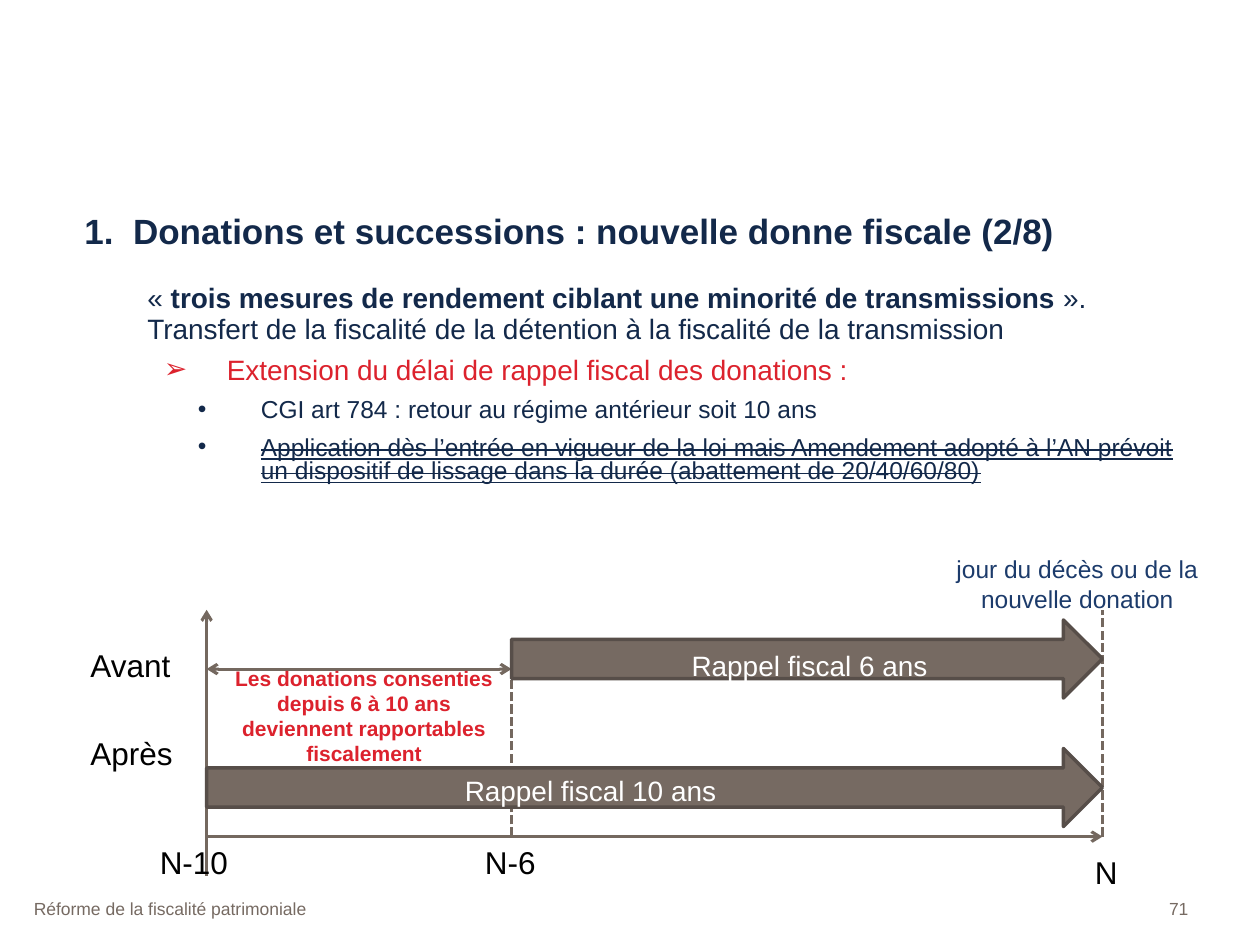
from typing import NamedTuple

import pptx
import pptx.dml.color
import pptx.enum.dml
import pptx.enum.shapes
import pptx.enum.text
import pptx.oxml
import pptx.oxml.ns
import pptx.util
from pptx.util import Inches

NAVY, BLUE, RED = "13294A", "1C3B6B", "DC222D"
TAUPE, LINE, OUTLINE = "766A62", "74685F", "574E49"
BLACK, WHITE = "000000", "FFFFFF"

LEFT = pptx.enum.text.PP_ALIGN.LEFT
CENTER = pptx.enum.text.PP_ALIGN.CENTER
RIGHT = pptx.enum.text.PP_ALIGN.RIGHT

# Horizontal positions of the dates and height of the time axis
N_10, N_6, N = 1.64, 4.06, 8.75
AXIS, CHART_TOP = 6.64, 4.84
ARROW_HEIGHT = 0.62


class Label(NamedTuple):
    text: str
    left: float
    top: float
    width: float
    height: float
    size: float
    color: str
    align: pptx.enum.text.PP_ALIGN = LEFT
    bold: bool = False
    wrap: bool = True


class Line(NamedTuple):
    start: tuple[float, float]
    end: tuple[float, float]
    dashed: bool = False
    head: bool = False
    tail: bool = False


class Run(NamedTuple):
    text: str
    bold: bool = False
    struck: bool = False


class Item(NamedTuple):
    runs: list[Run]
    level: int
    margin: float
    indent: float
    spacing: float
    size: float
    color: str
    bullet: str = ""


LINES = [
    Line((N_10, AXIS), (N, AXIS), tail=True),
    Line((N_6, AXIS), (N_6, 5.16), dashed=True),
    Line((N_10, 6.95), (N_10, CHART_TOP), tail=True),
    Line((N, AXIS), (N, CHART_TOP), dashed=True),
    Line((N_6, 5.31), (N_10, 5.31), head=True, tail=True),
]

# Start and top of each block arrow; both end at N
PERIODS = [(N_6, 4.92), (N_10, 5.94)]

LABELS = [
    Label("71", 8.91, 7.08, 0.62, 0.42, 10, TAUPE, RIGHT),
    Label("Réforme de la fiscalité patrimoniale", 0.17, 7.08, 8.48, 0.42, 10, TAUPE),
    Label("N", 8.59, 6.72, 0.55, 0.4, 18, BLACK),
    Label("N-6", 3.75, AXIS, 0.7, 0.4, 18, BLACK),
    Label("N-10", 1.17, AXIS, 0.94, 0.4, 18, BLACK),
    Label("Les donations consenties depuis 6 à 10 ans deviennent rapportables fiscalement",
          1.72, 5.23, 2.34, 0.91, 12, RED, CENTER, bold=True),
    Label("jour du décès ou de la nouvelle donation", 7.34, 4.35, 2.42, 0.57, 14, BLUE, CENTER),
    Label("Avant", 0.62, 5.08, 0.94, 0.4, 18, BLACK),
    Label("Après", 0.62, 5.78, 0.86, 0.4, 18, BLACK, wrap=False),
    Label("Rappel fiscal 6 ans", 5.39, 5.1, 3.12, 0.37, 16, WHITE),
    Label("Rappel fiscal 10 ans", 3.59, 6.09, 2.22, 0.37, 16, WHITE),
]

ITEMS = [
    Item([Run("«\u00a0"),
          Run("trois mesures de rendement ciblant une minorité de transmissions", bold=True),
          Run("\u00a0». Transfert de la fiscalité de la détention à la fiscalité de la transmission")],
         0, 0.5, 0, 0.9, 16, NAVY),
    Item([Run("Extension du délai de rappel fiscal des donations :")],
         1, 1.13, -0.5, 0.8, 16, RED, "➢"),
    Item([Run("CGI art 784 : retour au régime antérieur soit 10 ans")],
         2, 1.4, -0.5, 0.8, 14, NAVY, "•"),
    Item([Run("Application dès l’entrée en vigueur de la loi mais Amendement adopté à l’AN "
              "prévoit un dispositif de lissage dans la durée (abattement de 20/40/60/80)",
              struck=True)],
         2, 1.4, -0.5, 0.8, 14, NAVY, "•"),
]


def rgb(color: str) -> pptx.dml.color.RGBColor:
    return pptx.dml.color.RGBColor.from_string(color)


def add_element(parent, tag: str, **attributes: str) -> None:
    element = pptx.oxml.ns.qn(tag)
    child = parent.makeelement(element, attributes)
    parent.append(child)


def format_font(font, size: float, color: str, bold: bool = False) -> None:
    values = {"name": "Arial", "size": pptx.util.Pt(size), "bold": bold}
    for name, value in values.items():
        setattr(font, name, value)
    font.color.rgb = rgb(color)


def place(shape, left: float, top: float, width: float, height: float) -> None:
    values = {"left": left, "top": top, "width": width, "height": height}
    for name, value in values.items():
        setattr(shape, name, Inches(value))
    frame = shape.text_frame
    frame.vertical_anchor = pptx.enum.text.MSO_ANCHOR.TOP
    frame.auto_size = pptx.enum.text.MSO_AUTO_SIZE.NONE


def fill_title(title) -> None:
    place(title, 0.57, 1.61, 8.96, 0.47)
    paragraph = title.text_frame.paragraphs[0]
    paragraph.alignment = LEFT
    run = paragraph.add_run()
    run.text = "1.  Donations et successions : nouvelle donne fiscale (2/8)"
    format_font(run.font, 20, NAVY, bold=True)


def fill_body(body, items: list[Item]) -> None:
    place(body, 0.57, 2.21, 8.96, 4.49)
    frame = body.text_frame
    for index, item in enumerate(items):
        paragraph = frame.add_paragraph() if index else frame.paragraphs[0]
        properties = paragraph._p.get_or_add_pPr()
        properties.set("marL", str(Inches(item.margin)))
        properties.set("indent", str(Inches(item.indent)))
        if item.bullet:
            add_element(properties, "a:buChar", char=item.bullet)
        else:
            add_element(properties, "a:buNone")
        paragraph.level = item.level
        paragraph.line_spacing = item.spacing
        paragraph.space_before = pptx.util.Pt(8 if index else 0)
        for part in item.runs:
            run = paragraph.add_run()
            run.text = part.text
            format_font(run.font, item.size, item.color, part.bold)
            if part.struck:
                run.font.underline = True
                run._r.get_or_add_rPr().set("strike", "sngStrike")


def draw_line(slide, line: Line) -> None:
    points = [Inches(value) for value in (*line.start, *line.end)]
    connector = slide.shapes.add_connector(pptx.enum.shapes.MSO_CONNECTOR.STRAIGHT, *points)
    connector.line.color.rgb = rgb(LINE)
    connector.line.width = pptx.util.Pt(1.75)
    if line.dashed:
        connector.line.dash_style = pptx.enum.dml.MSO_LINE.SQUARE_DOT
    outline = connector.line._get_or_add_ln()
    for shown, tag in ((line.head, "a:headEnd"), (line.tail, "a:tailEnd")):
        if shown:
            add_element(outline, tag, type="arrow")
    add_element(connector._element.spPr, "a:effectLst")


def draw_period(slide, start: float, top: float) -> None:
    arrow = slide.shapes.add_shape(
        pptx.enum.shapes.MSO_SHAPE.RIGHT_ARROW,
        Inches(start), Inches(top), Inches(N - start), Inches(ARROW_HEIGHT))
    arrow.shadow.inherit = False
    arrow.fill.solid()
    arrow.fill.fore_color.rgb = rgb(TAUPE)
    arrow.line.color.rgb = rgb(OUTLINE)
    arrow.line.width = pptx.util.Pt(2)


def draw_label(slide, label: Label) -> None:
    bounds = (label.left, label.top, label.width, label.height)
    box = slide.shapes.add_textbox(*map(Inches, bounds))
    box.text_frame.word_wrap = label.wrap
    paragraph = box.text_frame.paragraphs[0]
    paragraph.alignment = label.align
    run = paragraph.add_run()
    run.text = label.text
    format_font(run.font, label.size, label.color, label.bold)


def main() -> None:
    presentation = pptx.Presentation()
    presentation.slide_width, presentation.slide_height = Inches(10), Inches(7.5)
    slide = presentation.slides.add_slide(presentation.slide_layouts[1])
    fill_title(slide.shapes.title)
    fill_body(slide.placeholders[1], ITEMS)
    for line in LINES:
        draw_line(slide, line)
    for start, top in PERIODS:
        draw_period(slide, start, top)
    for label in LABELS:
        draw_label(slide, label)
    presentation.save("out.pptx")


if __name__ == "__main__":
    main()
